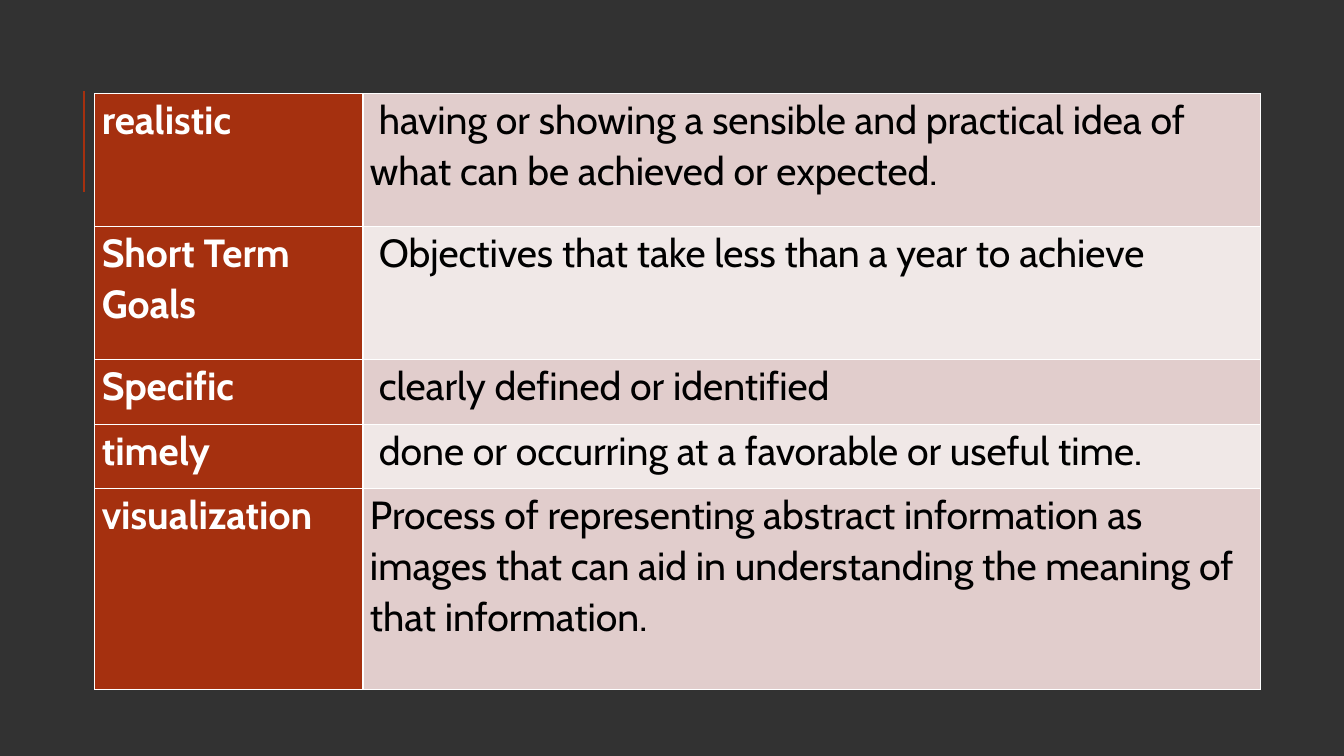
"""Build a vocabulary slide: a two-column table of goal-setting terms and definitions."""
from lxml import etree
from pptx import Presentation
from pptx import util as u
from pptx.dml.color import RGBColor
from pptx.enum import shapes
from pptx.oxml import ns


def paint(target, color):
    target.solid()
    target.fore_color.rgb = RGBColor.from_string(color)


def add_borders(cell, color, points):
    properties = cell._tc.get_or_add_tcPr()
    for position, side in enumerate(("lnL", "lnR", "lnT", "lnB")):
        line = etree.Element(ns.qn(f"a:{side}"), w=str(u.Pt(points)))
        solid = etree.SubElement(line, ns.qn("a:solidFill"))
        etree.SubElement(solid, ns.qn("a:srgbClr"), val=color)
        properties.insert(position, line)


RUST = "A5300F"
BANDS = ("E1CDCC", "F0E8E7")
TERMS = [
    ("realistic", " having or showing a sensible and practical idea of what can be achieved or expected.", 1.32),
    ("Short Term Goals", " Objectives that take less than a year to achieve", 1.32),
    ("Specific", " clearly defined or identified", 0.64),
    ("timely", " done or occurring at a favorable or useful time.", 0.64),
    ("visualization", "Process of representing abstract information as images "
     "that can aid in understanding the meaning of that information.", 1.99),
]

deck = Presentation()
deck.slide_width, deck.slide_height = u.Inches(13.33), u.Inches(7.5)
page = deck.slides.add_slide(deck.slide_layouts[6])
paint(page.background.fill, "323232")

accent = page.shapes.add_connector(
    shapes.MSO_CONNECTOR.STRAIGHT, u.Inches(0.83), u.Inches(1.9), u.Inches(0.83), u.Inches(0.9))
paint(accent.line.fill, RUST)
accent.line.width = u.Pt(1.5)
etree.SubElement(accent._element.spPr, ns.qn("a:effectLst"))

glossary = page.shapes.add_table(
    len(TERMS), 2, u.Inches(0.94), u.Inches(0.93), u.Inches(11.56), u.Inches(5.92)).table
glossary.first_row = False
glossary.first_col = True
for column, width in zip(glossary.columns, (2.66, 8.9)):
    column.width = u.Inches(width)

for index, (term, definition, height) in enumerate(TERMS):
    glossary.rows[index].height = u.Inches(height)
    styles = ((term, RUST, "FFFFFF", True), (definition, BANDS[index % 2], "000000", False))
    for column, (wording, fill, color, bold) in enumerate(styles):
        cell = glossary.cell(index, column)
        cell.margin_left = cell.margin_right = u.Inches(0.07)
        cell.margin_top = cell.margin_bottom = 0
        paint(cell.fill, fill)
        add_borders(cell, "FFFFFF", 1)
        para = cell.text_frame.paragraphs[0]
        para.line_spacing = 1.07
        span = para.add_run()
        span.text = wording
        span.font.name = "Cabin"
        span.font.size = u.Pt(28)
        span.font.bold = bold
        paint(span.font.fill, color)

deck.save("out.pptx")
